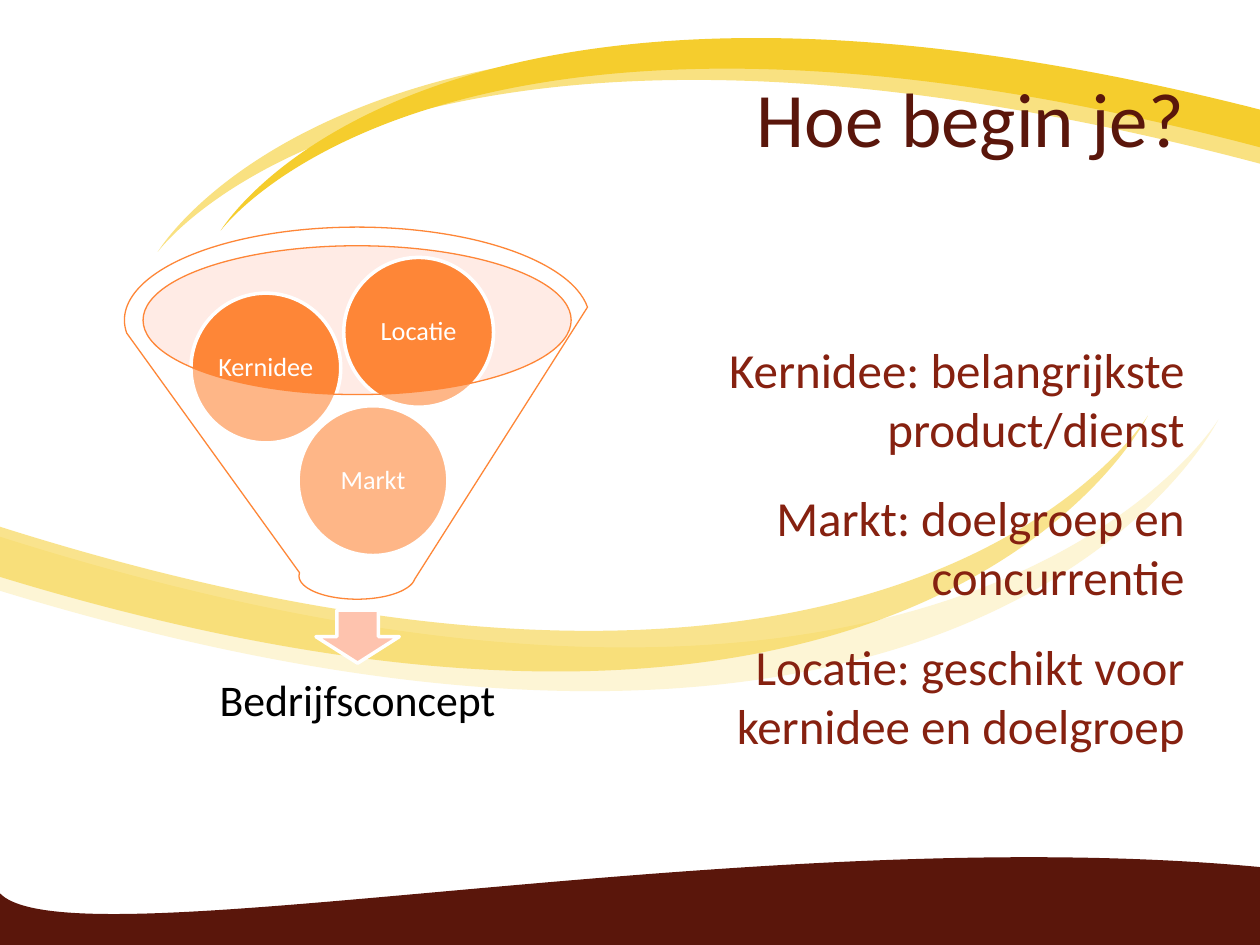
import pptx
import pptx.util
import pptx.dml.color
import pptx.enum.shapes
import pptx.enum.text
import pptx.oxml
import pptx.oxml.ns

Cm = pptx.util.Cm
Pt = pptx.util.Pt
Shapes = pptx.enum.shapes.MSO_SHAPE
Align = pptx.enum.text.PP_ALIGN
Anchor = pptx.enum.text.MSO_ANCHOR
qn = pptx.oxml.ns.qn
namespace = pptx.oxml.ns.nsdecls("a")


def paint(shape, fill, opacity=100, line=None, line_width=2):
    """Set fill, opacity in percent and outline, and remove the shadow."""
    shape.shadow.inherit = False
    shape.fill.solid()
    shape.fill.fore_color.rgb = pptx.dml.color.RGBColor.from_string(fill)
    if opacity < 100:
        color = shape.fill._xPr.find(".//" + qn("a:srgbClr"))
        color.append(pptx.oxml.parse_xml(f'<a:alpha {namespace} val="{opacity * 1000}"/>'))
    if line:
        shape.line.color.rgb = pptx.dml.color.RGBColor.from_string(line)
        shape.line.width = Pt(line_width)
    else:
        shape.line.fill.background()


def write(shape, lines, size, color, alignment, anchor, inset=None):
    frame = shape.text_frame
    frame.word_wrap = True
    frame.vertical_anchor = anchor
    if inset is not None:
        frame.margin_left = frame.margin_right = Cm(inset)
        frame.margin_top = frame.margin_bottom = Cm(inset)
    frame.text = "\n".join(lines)
    for para in frame.paragraphs:
        para.alignment = alignment
        for span in para.runs:
            span.font.name = "Calibri"
            span.font.size = Pt(size)
            span.font.color.rgb = pptx.dml.color.RGBColor.from_string(color)


deck = pptx.Presentation()
deck.slide_width, deck.slide_height = Cm(25.4), Cm(19.05)
page = deck.slides.add_slide(deck.slide_layouts[6])
shapes = page.shapes

# Background: a start point, then three points (two controls, end) per curve
outlines = [([(0, 18.01), (1.42, 19.48), (15.14, 16.51), (25.4, 17.48),
              (25.4, 18.01), (25.43, 18.59), (25.43, 19.15),
              (25.43, 19.15), (0, 19.08), (0, 19.08)], "5A160B", 100)]
swooshes = [  # edge start, outer control, tip, inner control, edge end
    ((0, 10.82), (19.38, 16.97), (24.56, 8.46), (19.86, 17.98), (0, 11.91), "FDF5D5", 100),
    ((25.4, 3.3), (7.85, -1.35), (3.18, 5.08), (7.42, -2.11), (25.4, 2.46), "F9E181", 100),
    ((25.4, 2.97), (8.86, -1.4), (4.45, 4.65), (8.46, -2.11), (25.4, 2.21), "F5CD2D", 100),
    ((0, 10.62), (18.29, 16.41), (23.14, 8.38), (18.72, 17.35), (0, 11.63), "F5CD2D", 54),
]
for start, outer, tip, inner, end, color, opacity in swooshes:
    points = [start, outer, tip, tip, tip, inner, end, end, start, start]
    outlines.append((points, color, opacity))

for points, color, opacity in outlines:
    corners = [(Cm(x), Cm(y)) for x, y in points]
    builder = shapes.build_freeform(*corners[0])
    builder.add_line_segments(corners[1:], close=True)
    swoosh = builder.convert_to_shape()
    # Join every three line segments into one cubic curve
    segments = list(swoosh._element.iter(qn("a:lnTo")))
    for first in range(0, len(segments), 3):
        curve = pptx.oxml.parse_xml(f"<a:cubicBezTo {namespace}/>")
        segments[first].addprevious(curve)
        for segment in segments[first:first + 3]:
            curve.append(segment[0])
            segment.getparent().remove(segment)
    paint(swoosh, color, opacity)

title = shapes.add_textbox(Cm(1.27), Cm(0.76), Cm(22.86), Cm(3.18))
write(title, ["Hoe begin je?"], 44, "5A160B", Align.RIGHT, Anchor.MIDDLE)

# Funnel diagram
opening = shapes.add_shape(Shapes.OVAL, Cm(2.87), Cm(4.95), Cm(8.64), Cm(3))
paint(opening, "FFCEBF", 40)
arrow = shapes.add_shape(Shapes.DOWN_ARROW, Cm(6.37), Cm(12.3), Cm(1.68), Cm(1.07))
paint(arrow, "FEC3AE", line="FFFFFF")
result = shapes.add_textbox(Cm(3.18), Cm(13.16), Cm(8.05), Cm(2.01))
write(result, ["Bedrijfsconcept"], 25, "000000", Align.CENTER, Anchor.MIDDLE, 0.48)
result.text_frame.paragraphs[0].line_spacing = 0.9

for label, left, top in [("Markt", 6.01, 8.18), ("Kernidee", 3.85, 5.91),
                         ("Locatie", 6.93, 5.19)]:
    ball = shapes.add_shape(Shapes.OVAL, Cm(left), Cm(top), Cm(3.02), Cm(3.02))
    paint(ball, "FE8637", line="FFFFFF")
    write(ball, [label], 15, "FFFFFF", Align.CENTER, Anchor.MIDDLE, 0.05)
    ball.text_frame.paragraphs[0].line_spacing = 0.9

funnel = shapes.add_shape(Shapes.FUNNEL, Cm(2.51), Cm(4.58), Cm(9.38), Cm(7.5))
paint(funnel, "FFFFFF", 40, line="FE8637", line_width=0.75)

# Explanation
body = shapes.add_textbox(Cm(12.9), Cm(6.72), Cm(11.23), Cm(10.29))
write(body, ["Kernidee: belangrijkste product/dienst",
             "Markt: doelgroep en concurrentie",
             "Locatie: geschikt voor kernidee en doelgroep"],
      28, "862110", Align.RIGHT, Anchor.TOP)
for para in body.text_frame.paragraphs:
    para.space_before, para.space_after = Pt(5.6), Pt(12)
    properties = para._p.get_or_add_pPr()
    properties.set("marL", str(Cm(0.95)))
    properties.set("indent", str(-Cm(0.95)))

deck.save("out.pptx")
